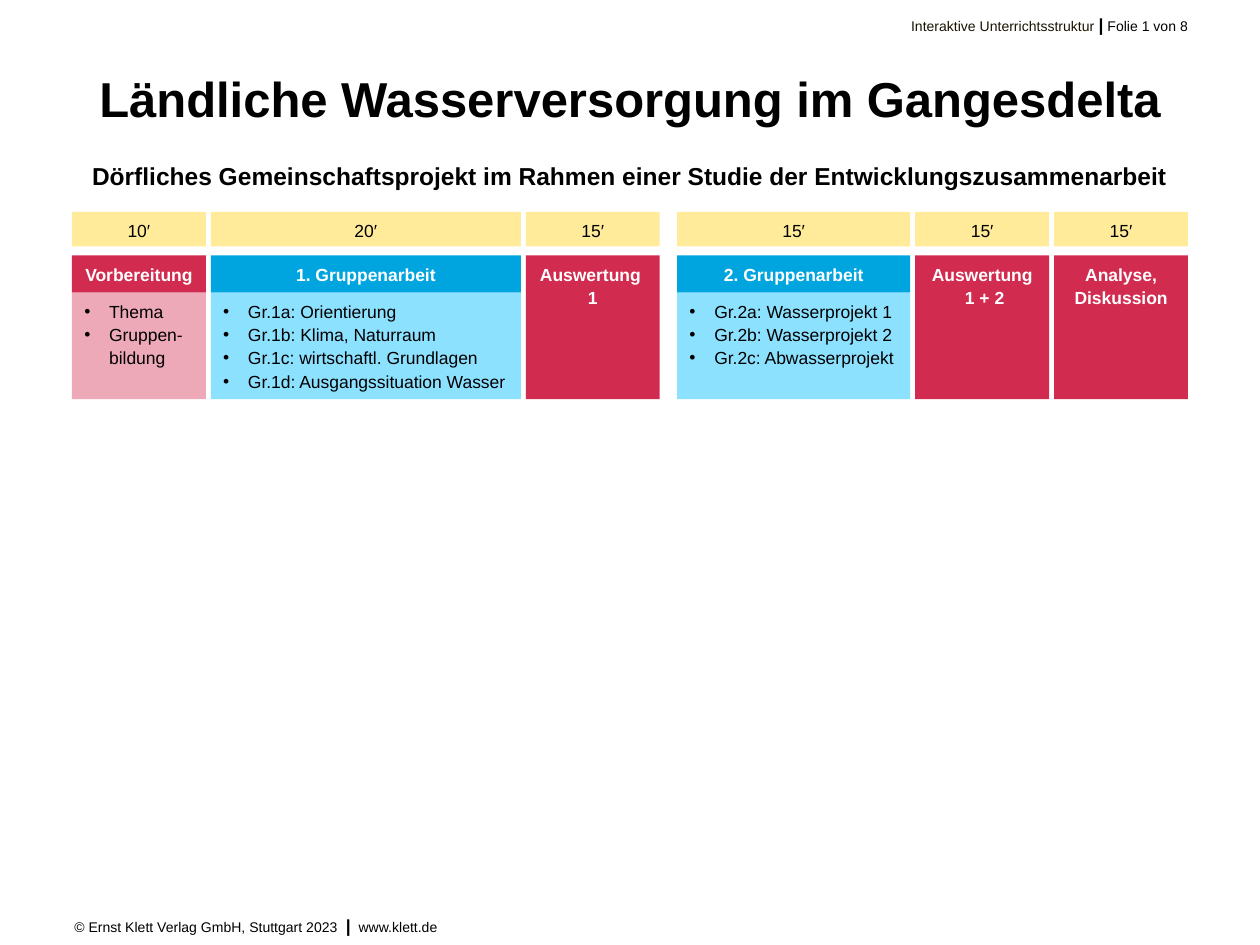
from dataclasses import dataclass

from lxml.etree import SubElement
from pptx import Presentation
from pptx.dml.color import RGBColor
from pptx.enum.shapes import MSO_SHAPE as SHAPE
from pptx.enum.text import MSO_ANCHOR as ANCHOR, PP_ALIGN as ALIGN
from pptx.oxml.ns import qn
from pptx.util import Cm, Pt

COLORS = {
    "time": "FFEB99", "red": "D12B4F", "pink": "EDA9B8",
    "blue": "00A5DF", "light_blue": "8CE1FF",
    "black": "000000", "white": "FFFFFF", "brown": "191300",
}
FONT = "Arial"
LEFT, WIDTH = 1.45, 22.5
GAP, LESSON_GAP = 0.1, 0.35
TIME_TOP, TIME_H = 4.27, 0.7
PHASE_TOP, HEAD_H, BODY_H = 5.15, 0.75, 2.15
INSETS = (0.25, 0.13)


@dataclass
class Phase:
    minutes: int
    heading: str
    width: float = 2.7
    items: tuple[str, ...] = ()
    head_color: str = "red"
    body_color: str = "pink"
    gap_after: float = GAP


PHASES = [
    Phase(10, "Vorbereitung", items=("Thema", "Gruppen-bildung")),
    Phase(20, "1. Gruppenarbeit", 6.25,
          ("Gr.1a: Orientierung", "Gr.1b: Klima, Naturraum",
           "Gr.1c: wirtschaftl. Grundlagen",
           "Gr.1d: Ausgangssituation Wasser"), "blue", "light_blue"),
    Phase(15, "Auswertung \v1", gap_after=LESSON_GAP),
    Phase(15, "2. Gruppenarbeit", 4.7,
          ("Gr.2a: Wasserprojekt 1", "Gr.2b: Wasserprojekt 2",
           "Gr.2c: Abwasserprojekt"), "blue", "light_blue"),
    Phase(15, "Auswertung\v 1 + 2"),
    Phase(15, "Analyse, Diskussion"),
]


def style_run(r, size: float, color: str = "black", bold: bool = False) -> None:
    r.font.name, r.font.size, r.font.bold = FONT, Pt(size), bold
    r.font.color.rgb = RGBColor.from_string(COLORS[color])


def set_frame(tf, insets: tuple[float, float] = (0, 0), anchor=ANCHOR.TOP) -> None:
    tf.word_wrap = True
    tf.vertical_anchor = anchor
    tf.margin_left = tf.margin_right = Cm(insets[0])
    tf.margin_top = tf.margin_bottom = Cm(insets[1])


def add_bullet(p) -> None:
    pPr = p._p.get_or_add_pPr()
    pPr.set("marL", str(Cm(0.5)))
    pPr.set("indent", str(-Cm(0.5)))
    SubElement(pPr, qn("a:buFont")).set("typeface", FONT)
    SubElement(pPr, qn("a:buChar")).set("char", "•")


def add_box(slide, x: float, y: float, w: float, h: float, fill: str,
            lines: tuple[str, ...], color: str = "black",
            bold: bool = False, bullets: bool = False) -> None:
    s = slide.shapes.add_shape(SHAPE.RECTANGLE, Cm(x), Cm(y), Cm(w), Cm(h))
    s.shadow.inherit = False
    s.fill.solid()
    s.fill.fore_color.rgb = RGBColor.from_string(COLORS[fill])
    s.line.fill.background()
    tf = s.text_frame
    set_frame(tf, INSETS)
    tf.text = "\n".join(lines)
    for p in tf.paragraphs:
        p.alignment = ALIGN.LEFT if bullets else ALIGN.CENTER
        p.line_spacing = 1.1
        if bullets:
            add_bullet(p)
        for r in p.runs:
            style_run(r, 10, color, bold)


def add_text(slide, x: float, y: float, w: float, h: float, runs: list[tuple],
             align=ALIGN.LEFT, spacing: float = 1.0, anchor=ANCHOR.TOP) -> None:
    s = slide.shapes.add_textbox(Cm(x), Cm(y), Cm(w), Cm(h))
    set_frame(s.text_frame, anchor=anchor)
    p = s.text_frame.paragraphs[0]
    p.alignment, p.line_spacing = align, spacing
    for text, *style in runs:
        r = p.add_run()
        r.text = text
        style_run(r, *style)


def add_phase(slide, phase: Phase, x: float) -> None:
    w = phase.width
    add_box(slide, x, TIME_TOP, w, TIME_H, "time", (f"{phase.minutes}′",))
    head_h = HEAD_H if phase.items else HEAD_H + BODY_H
    add_box(slide, x, PHASE_TOP, w, head_h, phase.head_color,
            (phase.heading,), "white", bold=True)
    if phase.items:
        add_box(slide, x, PHASE_TOP + HEAD_H, w, BODY_H, phase.body_color,
                phase.items, bullets=True)


def main() -> None:
    prs = Presentation()
    prs.slide_width, prs.slide_height = Cm(25.4), Cm(19.05)
    slide = prs.slides.add_slide(prs.slide_layouts[5])

    # Header and footer
    bar = ("|", 10, "black", True)
    add_text(slide, 7.7, 0.29, 16.25, 0.5,
             [("Interaktive Unterrichtsstruktur ", 8, "brown"), bar,
              (" Folie 1 von 8", 8)], ALIGN.RIGHT)
    add_text(slide, 1.5, 18.45, 19.25, 0.5,
             [("© Ernst Klett Verlag GmbH, Stuttgart 2023  ", 8), bar,
              ("  ", 8, "black", True), ("www.klett.de", 8)])

    # Title and subtitle
    title = slide.shapes.title
    title.left, title.top = Cm(LEFT), Cm(1.52)
    title.width, title.height = Cm(WIDTH), Cm(1.5)
    tf = title.text_frame
    tf.text = "Ländliche Wasserversorgung im Gangesdelta"
    set_frame(tf)
    p = tf.paragraphs[0]
    p.alignment, p.line_spacing = ALIGN.CENTER, 0.9
    style_run(p.runs[0], 28, bold=True)
    add_text(slide, LEFT, 3.02, WIDTH, 1,
             [("Dörfliches Gemeinschaftsprojekt im Rahmen einer Studie "
               "der Entwicklungszusammenarbeit", 14, "black", True)],
             ALIGN.CENTER, 1.1, ANCHOR.MIDDLE)

    # Lesson phases, left to right
    x = LEFT
    for phase in PHASES:
        add_phase(slide, phase, x)
        x += phase.width + phase.gap_after

    prs.save("out.pptx")


if __name__ == "__main__":
    main()
